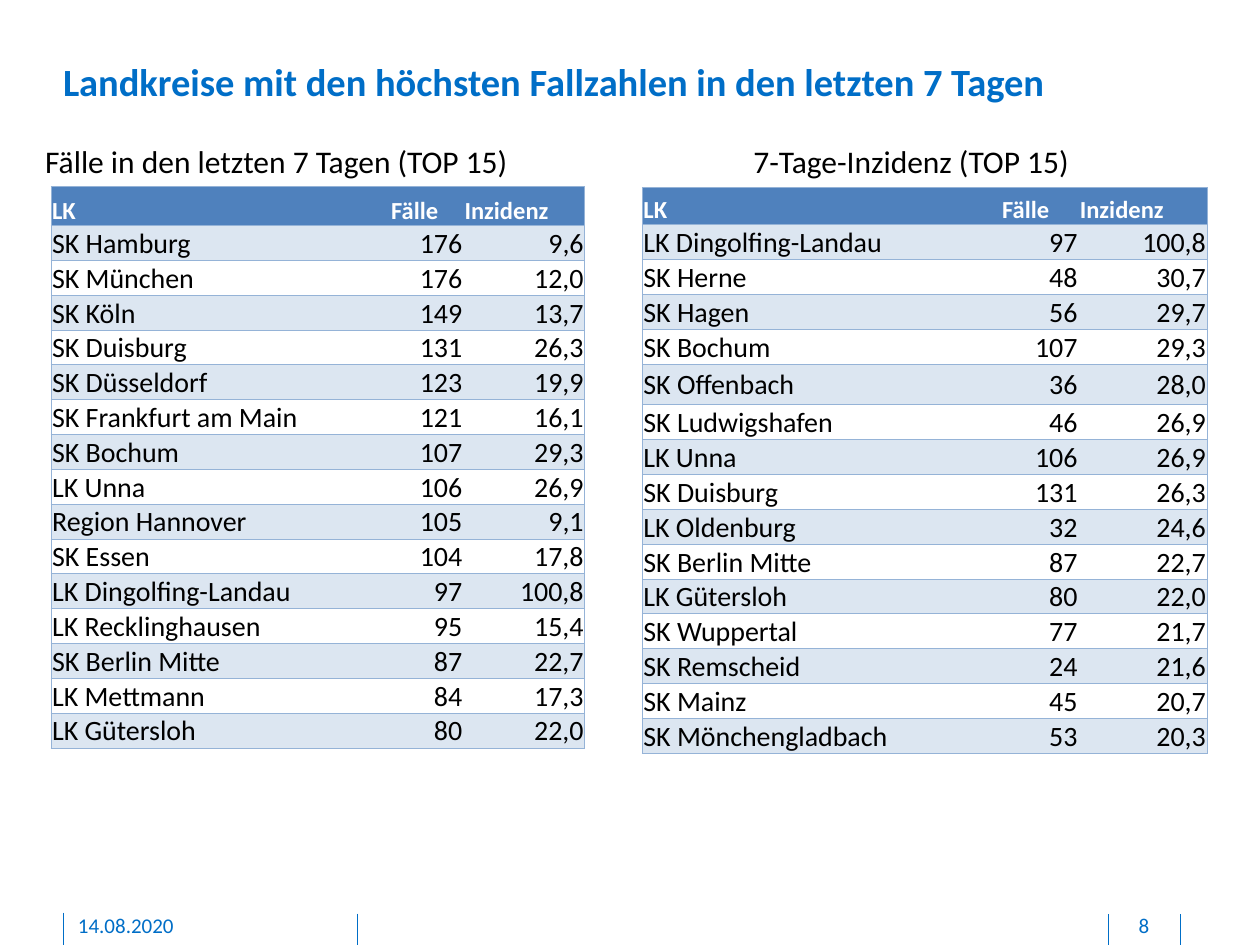
"""Build the slide with the two TOP 15 tables of seven-day case numbers."""
from dataclasses import dataclass

import pptx
import pptx.dml.color
import pptx.enum.text
import pptx.oxml
import pptx.oxml.ns
import pptx.util
from pptx.util import Pt

ALIGN = pptx.enum.text.PP_ALIGN
ANCHOR = pptx.enum.text.MSO_ANCHOR


@dataclass(frozen=True)
class Theme:
    font: str = "Calibri"
    accent: str = "006EC7"
    text: str = "000000"
    header_text: str = "FFFFFF"
    header_fill: str = "4F81BD"
    band_fill: str = "DCE6F1"
    border: str = "95B3D7"
    title_size: float = 22
    heading_size: float = 18
    body_size: float = 16
    header_size: float = 14
    footer_size: float = 12
    line_width: float = 0.5


THEME = Theme()
HEADER = ("LK", "Fälle", "Inzidenz")
MOST_CASES = [
    ("SK Hamburg", "176", "9,6"),
    ("SK München", "176", "12,0"),
    ("SK Köln", "149", "13,7"),
    ("SK Duisburg", "131", "26,3"),
    ("SK Düsseldorf", "123", "19,9"),
    ("SK Frankfurt am Main", "121", "16,1"),
    ("SK Bochum", "107", "29,3"),
    ("LK Unna", "106", "26,9"),
    ("Region Hannover", "105", "9,1"),
    ("SK Essen", "104", "17,8"),
    ("LK Dingolfing-Landau", "97", "100,8"),
    ("LK Recklinghausen", "95", "15,4"),
    ("SK Berlin Mitte", "87", "22,7"),
    ("LK Mettmann", "84", "17,3"),
    ("LK Gütersloh", "80", "22,0"),
]
HIGHEST_INCIDENCE = [
    ("LK Dingolfing-Landau", "97", "100,8"),
    ("SK Herne", "48", "30,7"),
    ("SK Hagen", "56", "29,7"),
    ("SK Bochum", "107", "29,3"),
    ("SK Offenbach", "36", "28,0"),
    ("SK Ludwigshafen", "46", "26,9"),
    ("LK Unna", "106", "26,9"),
    ("SK Duisburg", "131", "26,3"),
    ("LK Oldenburg", "32", "24,6"),
    ("SK Berlin Mitte", "87", "22,7"),
    ("LK Gütersloh", "80", "22,0"),
    ("SK Wuppertal", "77", "21,7"),
    ("SK Remscheid", "24", "21,6"),
    ("SK Mainz", "45", "20,7"),
    ("SK Mönchengladbach", "53", "20,3"),
]


def rgb(value):
    return pptx.dml.color.RGBColor.from_string(value)


def style_paragraph(paragraph, size, color, bold=False, align=ALIGN.LEFT):
    paragraph.alignment = align
    paragraph.font.name = THEME.font
    paragraph.font.size = Pt(size)
    paragraph.font.bold = bold
    paragraph.font.color.rgb = rgb(color)


def set_margins(target, left, top, right, bottom):
    target.margin_left, target.margin_top = Pt(left), Pt(top)
    target.margin_right, target.margin_bottom = Pt(right), Pt(bottom)


def add_text(slide, box, text, size, color, margins=(7.2, 3.6, 7.2, 3.6), wrap=True, **style):
    shape = slide.shapes.add_textbox(*map(Pt, box))
    frame = shape.text_frame
    frame.word_wrap = wrap
    set_margins(frame, *margins)
    frame.text = text
    style_paragraph(frame.paragraphs[0], size, color, **style)


def add_footer_line(slide, x, top):
    line = slide.shapes.add_connector(
        pptx.enum.shapes.MSO_CONNECTOR.STRAIGHT, Pt(x), Pt(top), Pt(x), Pt(540))
    line.line.color.rgb = rgb(THEME.accent)
    line.line.width = Pt(THEME.line_width)
    properties = line._element.spPr
    properties.append(properties.makeelement(pptx.oxml.ns.qn("a:effectLst"), {}))


def set_borders(cell, visible_sides):
    properties = cell._tc.get_or_add_tcPr()
    namespace = pptx.oxml.ns.nsdecls("a")
    for side in "LRTB":
        fill = "<a:noFill/>"
        if side in visible_sides:
            fill = f'<a:solidFill><a:srgbClr val="{THEME.border}"/></a:solidFill>'
        properties.append(pptx.oxml.parse_xml(
            f'<a:ln{side} {namespace} w="{Pt(THEME.line_width)}">{fill}</a:ln{side}>'))


def fill_cell(cell, text, row, column, body_anchor):
    is_header = row == 0
    cell.text = text
    set_margins(cell, 0.7, 0.7, 0.7, 0)
    cell.vertical_anchor = ANCHOR.BOTTOM if is_header else body_anchor
    set_borders(cell, ("LTB", "TB", "RTB")[column])
    paragraph = cell.text_frame.paragraphs[0]
    if is_header:
        style_paragraph(paragraph, THEME.header_size, THEME.header_text, bold=True)
    else:
        align = ALIGN.RIGHT if column else ALIGN.LEFT
        style_paragraph(paragraph, THEME.body_size, THEME.text, align=align)
    if is_header or row % 2:
        cell.fill.solid()
        cell.fill.fore_color.rgb = rgb(THEME.header_fill if is_header else THEME.band_fill)
    else:
        cell.fill.background()


def add_ranking(slide, left, top, widths, heights, records, body_anchor):
    rows = [HEADER, *records]
    frame = slide.shapes.add_table(
        len(rows), len(widths), Pt(left), Pt(top), Pt(sum(widths)), Pt(sum(heights)))
    table = frame.table
    for column, width in zip(table.columns, widths):
        column.width = Pt(width)
    for row, height in zip(table.rows, heights):
        row.height = Pt(height)
    for row, record in enumerate(rows):
        for column, text in enumerate(record):
            fill_cell(table.cell(row, column), text, row, column, body_anchor)


def main():
    presentation = pptx.Presentation()
    presentation.slide_width, presentation.slide_height = Pt(720), Pt(540)
    slide = presentation.slides.add_slide(presentation.slide_layouts[6])

    for x, top in ((204.5, 522), (36, 521.5), (674.5, 522.5), (633.5, 522.5)):
        add_footer_line(slide, x, top)
    add_text(slide, (36, 33.1, 637.2, 26.6),
             "Landkreise mit den höchsten Fallzahlen in den letzten 7 Tagen",
             THEME.title_size, THEME.accent, margins=(0, 0, 0, 0), bold=True)
    for box, text, align in (((44.6, 521.3, 146.2, 15.1), "14.08.2020", ALIGN.LEFT),
                             ((634.3, 521.3, 38.9, 15.1), "8", ALIGN.CENTER)):
        add_text(slide, box, text, THEME.footer_size, THEME.accent,
                 margins=(0, 0, 0, 3.6), align=align)
    for left, width, text in ((423.4, 197.3, "7-Tage-Inzidenz (TOP 15)"),
                              (18.7, 282.2, "Fälle in den letzten 7 Tagen (TOP 15)")):
        add_text(slide, (left, 77.8, width, 28.8), text,
                 THEME.heading_size, THEME.text, wrap=False)

    add_ranking(slide, 29.1, 106.6, (193.7, 42, 69.4), [22.3] + [19.8] * 15,
                MOST_CASES, ANCHOR.BOTTOM)
    add_ranking(slide, 367, 107.2, (205, 44.4, 73.4),
                [21.3] + [18.9] * 4 + [23.3] + [18.9] * 10,
                HIGHEST_INCIDENCE, ANCHOR.MIDDLE)
    presentation.save("out.pptx")


if __name__ == "__main__":
    main()
